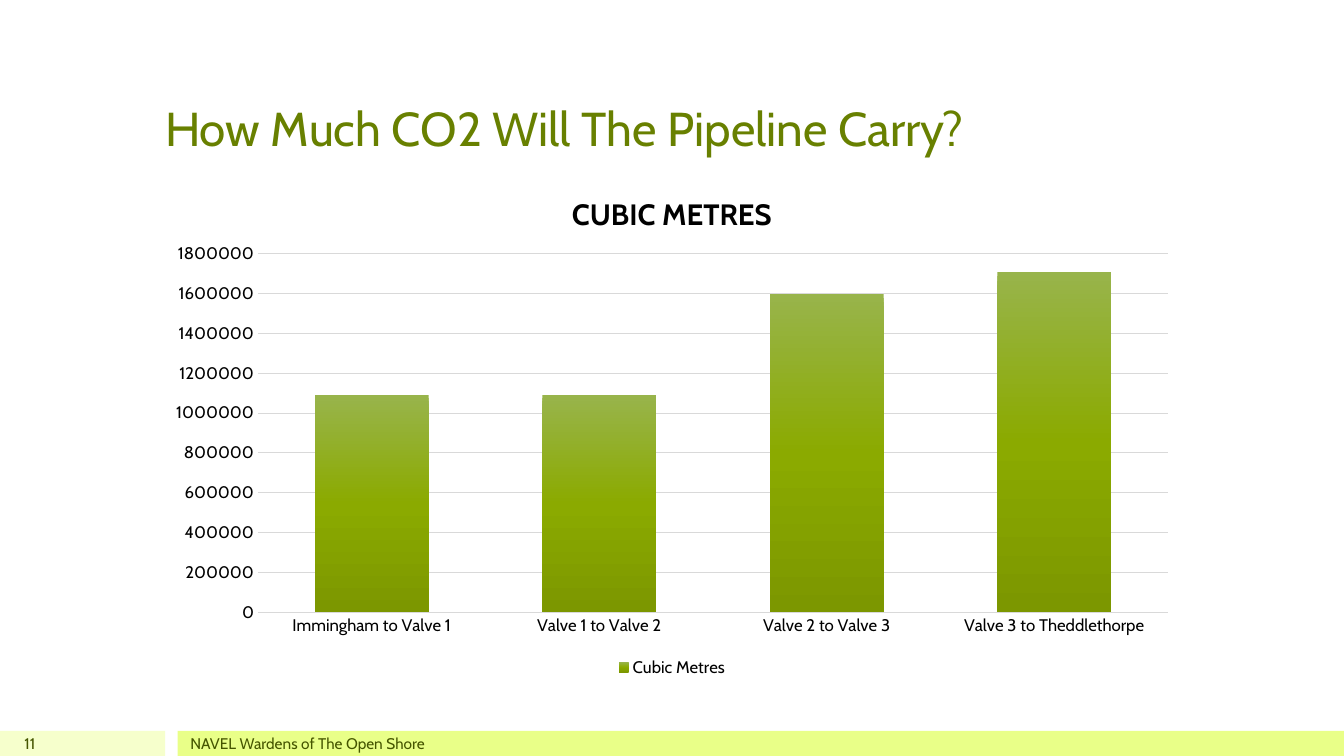
from pptx import Presentation
from pptx.chart import data as chart_data
from pptx.dml.color import RGBColor
from pptx.enum import chart as charts, shapes, text
from pptx.oxml import parse_xml
from pptx.oxml import ns
from pptx.util import Pt

FONT = "Cabin"
COLOURS = {
    "title": "688000",
    "footer": "455500",
    "number_band": "F6FFCC",
    "footer_band": "E9FF88",
    "chart_text": "000000",
    "grid": "D9D9D9",
}
BAR_GRADIENT = {0: "98B44B", 50: "8BAA00", 100: "7C9700"}
VOLUMES = {
    "Immingham to Valve 1": 1090000,
    "Valve 1 to Valve 2": 1090000,
    "Valve 2 to Valve 3": 1600000,
    "Valve 3 to Theddlethorpe": 1710000,
}
FOOTER_TOP, FOOTER_HEIGHT = 522, 18
BODY_LEFT, BODY_WIDTH = 110.88, 738
CHART_TOP, CHART_HEIGHT = 123.12, 363.6
PLOT_BOX = {"x": 73.4, "y": 58.3, "w": 650, "h": 256}


def rgb(name):
    return RGBColor.from_string(COLOURS[name])


def style_font(font, size, colour, bold=False):
    font.name = FONT
    font.size = Pt(size)
    font.bold = bold
    font.color.rgb = rgb(colour)


def style_line(line, colour):
    line.color.rgb = rgb(colour)
    line.width = Pt(0.75)


def add_band(slide, left, width, colour):
    band = slide.shapes.add_shape(
        shapes.MSO_SHAPE.RECTANGLE, Pt(left), Pt(FOOTER_TOP), Pt(width), Pt(FOOTER_HEIGHT))
    band.shadow.inherit = False
    band.fill.solid()
    band.fill.fore_color.rgb = rgb(colour)
    band.line.fill.background()


def add_label(slide, wording, box, size, colour,
              anchor=text.MSO_ANCHOR.MIDDLE, align=text.PP_ALIGN.LEFT):
    frame = slide.shapes.add_textbox(*map(Pt, box)).text_frame
    frame.word_wrap = True
    frame.vertical_anchor = anchor
    frame.margin_top = frame.margin_bottom = 0
    label = frame.paragraphs[0]
    label.text = wording
    label.alignment = align
    style_font(label.font, size, colour)


def fill_with_gradient(series, stops):
    stop_xml = "".join(
        f'<a:gs pos="{percent * 1000}"><a:srgbClr val="{colour}"/></a:gs>'
        for percent, colour in stops.items())
    gradient = parse_xml(
        f'<a:gradFill {ns.nsdecls("a")} rotWithShape="1"><a:gsLst>{stop_xml}</a:gsLst>'
        '<a:lin ang="5400000" scaled="0"/></a:gradFill>')
    series._element.get_or_add_spPr().insert(0, gradient)


def place_plot(chart, box):
    spans = {"x": BODY_WIDTH, "y": CHART_HEIGHT, "w": BODY_WIDTH, "h": CHART_HEIGHT}
    sides = "".join(f'<c:{side} val="{box[side] / spans[side]:.4f}"/>' for side in box)
    layout = parse_xml(
        f'<c:layout {ns.nsdecls("c")}><c:manualLayout><c:layoutTarget val="inner"/>'
        f'<c:xMode val="edge"/><c:yMode val="edge"/>{sides}</c:manualLayout></c:layout>')
    plot_area = chart._chartSpace.chart.plotArea
    for automatic in plot_area.findall(ns.qn("c:layout")):
        plot_area.remove(automatic)
    plot_area.insert(0, layout)


def add_volume_chart(slide):
    volumes = chart_data.CategoryChartData()
    volumes.categories = list(VOLUMES)
    volumes.add_series("Cubic Metres", list(VOLUMES.values()))
    chart = slide.shapes.add_chart(
        charts.XL_CHART_TYPE.COLUMN_STACKED,
        Pt(BODY_LEFT), Pt(CHART_TOP), Pt(BODY_WIDTH), Pt(CHART_HEIGHT), volumes).chart
    style_font(chart.font, 12, "chart_text")
    place_plot(chart, PLOT_BOX)

    heading = chart.chart_title.text_frame.paragraphs[0]
    heading.text = "CUBIC METRES"
    style_font(heading.font, 21, "chart_text", bold=True)
    chart.chart_title.include_in_layout = False

    chart.has_legend = True
    chart.legend.position = charts.XL_LEGEND_POSITION.BOTTOM
    chart.legend.include_in_layout = False
    style_font(chart.legend.font, 12, "chart_text")

    columns = chart.plots[0]
    columns.gap_width = 100
    columns.overlap = 100
    columns.vary_by_categories = False
    fill_with_gradient(columns.series[0], BAR_GRADIENT)

    for axis in (chart.category_axis, chart.value_axis):
        axis.major_tick_mark = charts.XL_TICK_MARK.NONE
        axis.minor_tick_mark = charts.XL_TICK_MARK.NONE
        style_font(axis.tick_labels.font, 12, "chart_text")
    style_line(chart.category_axis.format.line, "grid")

    scale = chart.value_axis
    scale.minimum_scale, scale.maximum_scale, scale.major_unit = 0, 1800000, 200000
    scale.format.line.fill.background()
    scale.has_major_gridlines = True
    style_line(scale.major_gridlines.format.line, "grid")


def main():
    deck = Presentation()
    deck.slide_width, deck.slide_height = Pt(960), Pt(540)
    slide = deck.slides.add_slide(deck.slide_layouts[6])

    add_band(slide, 0, 118, "number_band")
    add_band(slide, 126.9, 833.1, "footer_band")
    add_label(slide, "How Much CO2 Will The Pipeline Carry?",
              (BODY_LEFT, 21.6, BODY_WIDTH, 90), 34, "title",
              anchor=text.MSO_ANCHOR.BOTTOM)
    add_label(slide, "11", (0, FOOTER_TOP, 32.4, FOOTER_HEIGHT), 11, "footer",
              align=text.PP_ALIGN.RIGHT)
    add_label(slide, "NAVEL Wardens of The Open Shore",
              (128.9, FOOTER_TOP, 720, FOOTER_HEIGHT), 11, "footer")
    add_volume_chart(slide)
    deck.save("out.pptx")


if __name__ == "__main__":
    main()
